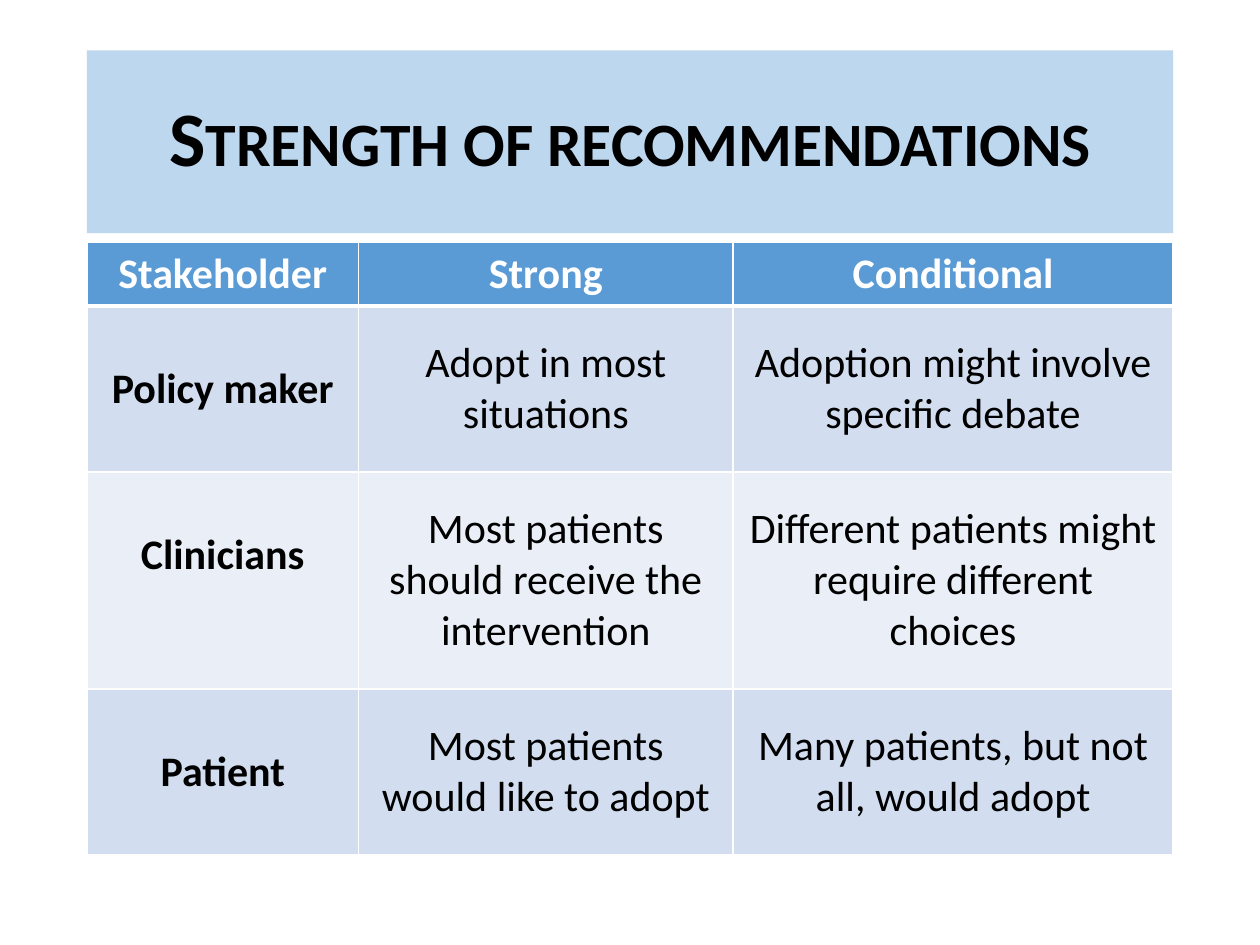
"""Build a slide that compares strong and conditional recommendations by stakeholder."""
from lxml.etree import SubElement
from pptx import Presentation
from pptx.dml.color import RGBColor
from pptx.enum.text import MSO_ANCHOR as Anchor, MSO_AUTO_SIZE as AutoSize, PP_ALIGN as Align
from pptx.oxml.ns import qn
from pptx.util import Inches, Pt

TITLE = "Strength of recommendations"
HEADER = ("Stakeholder", "Strong", "Conditional")
BODY = [
    ("Policy maker", "Adopt in most situations", "Adoption might involve specific debate"),
    ("Clinicians", "Most patients should receive the intervention",
     "Different patients might require different choices"),
    ("Patient", "Most patients would like to adopt", "Many patients, but not all, would adopt"),
]
COLORS = {
    "title": "BDD7EE", "header": "5B9BD5", "odd": "D2DEEF", "even": "EAEFF7",
    "white": "FFFFFF", "black": "000000",
}
FONT = "Calibri"
SLIDE_WIDTH, SLIDE_HEIGHT = 10, 7.5
LEFT = 0.69
WIDTH = SLIDE_WIDTH - 2 * LEFT
TITLE_TOP, TITLE_HEIGHT = 0.4, 1.45
TABLE_TOP = 1.92
COLUMN_SHARES = (0.25, 0.345, 0.405)
ROW_HEIGHTS = (0.5, 1.32, 1.72, 1.32)
LABEL_INSET, TEXT_INSET, HEADER_INSET = 0.46, 0.25, 0.05


def color(name):
    return RGBColor.from_string(COLORS[name])


def fill_with(target, name):
    target.fill.solid()
    target.fill.fore_color.rgb = color(name)


def write(frame, text, size=24, bold=False, ink="black", spacing=1.0, small_caps=False):
    paragraph = frame.paragraphs[0]
    paragraph.alignment = Align.CENTER
    paragraph.line_spacing = spacing
    run = paragraph.add_run()
    run.text = text
    run.font.name = FONT
    run.font.size = Pt(size)
    run.font.bold = bold
    run.font.color.rgb = color(ink)
    if small_caps:
        run.font._element.set("cap", "small")


def set_borders(cell, **widths):
    properties = cell._tc.get_or_add_tcPr()
    for side, width in widths.items():
        line = SubElement(properties, qn(f"a:ln{side}"), w=str(Pt(width)))
        line_fill = SubElement(line, qn("a:solidFill"))
        SubElement(line_fill, qn("a:srgbClr"), val=COLORS["white"])


def add_title(slide):
    title = slide.shapes.title
    title.left, title.top = Inches(LEFT), Inches(TITLE_TOP)
    title.width, title.height = Inches(WIDTH), Inches(TITLE_HEIGHT)
    fill_with(title, "title")
    frame = title.text_frame
    frame.word_wrap = True
    frame.auto_size = AutoSize.NONE
    frame.vertical_anchor = Anchor.MIDDLE
    write(frame, TITLE, size=44, bold=True, spacing=0.9, small_caps=True)


def add_recommendations(slide):
    rows = [HEADER, *BODY]
    table = slide.shapes.add_table(
        len(rows), len(HEADER), Inches(LEFT), Inches(TABLE_TOP),
        Inches(WIDTH), Inches(sum(ROW_HEIGHTS)),
    ).table
    for column, share in zip(table.columns, COLUMN_SHARES):
        column.width = Inches(WIDTH * share)
    for row_index, (texts, height) in enumerate(zip(rows, ROW_HEIGHTS)):
        table.rows[row_index].height = Inches(height)
        is_header = row_index == 0
        band = "header" if is_header else "odd" if row_index % 2 else "even"
        for column_index, text in enumerate(texts):
            cell = table.cell(row_index, column_index)
            is_label = column_index == 0
            inset = HEADER_INSET if is_header else LABEL_INSET if is_label else TEXT_INSET
            cell.margin_top = Inches(inset)
            cell.vertical_anchor = Anchor.TOP
            set_borders(cell, L=1, R=1, T=3 if row_index == 1 else 1, B=3 if is_header else 1)
            fill_with(cell, band)
            write(cell.text_frame, text, bold=is_header or is_label,
                  ink="white" if is_header else "black")


def main():
    presentation = Presentation()
    presentation.slide_width = Inches(SLIDE_WIDTH)
    presentation.slide_height = Inches(SLIDE_HEIGHT)
    slide = presentation.slides.add_slide(presentation.slide_layouts.get_by_name("Title Only"))
    add_title(slide)
    add_recommendations(slide)
    presentation.save("out.pptx")


if __name__ == "__main__":
    main()
